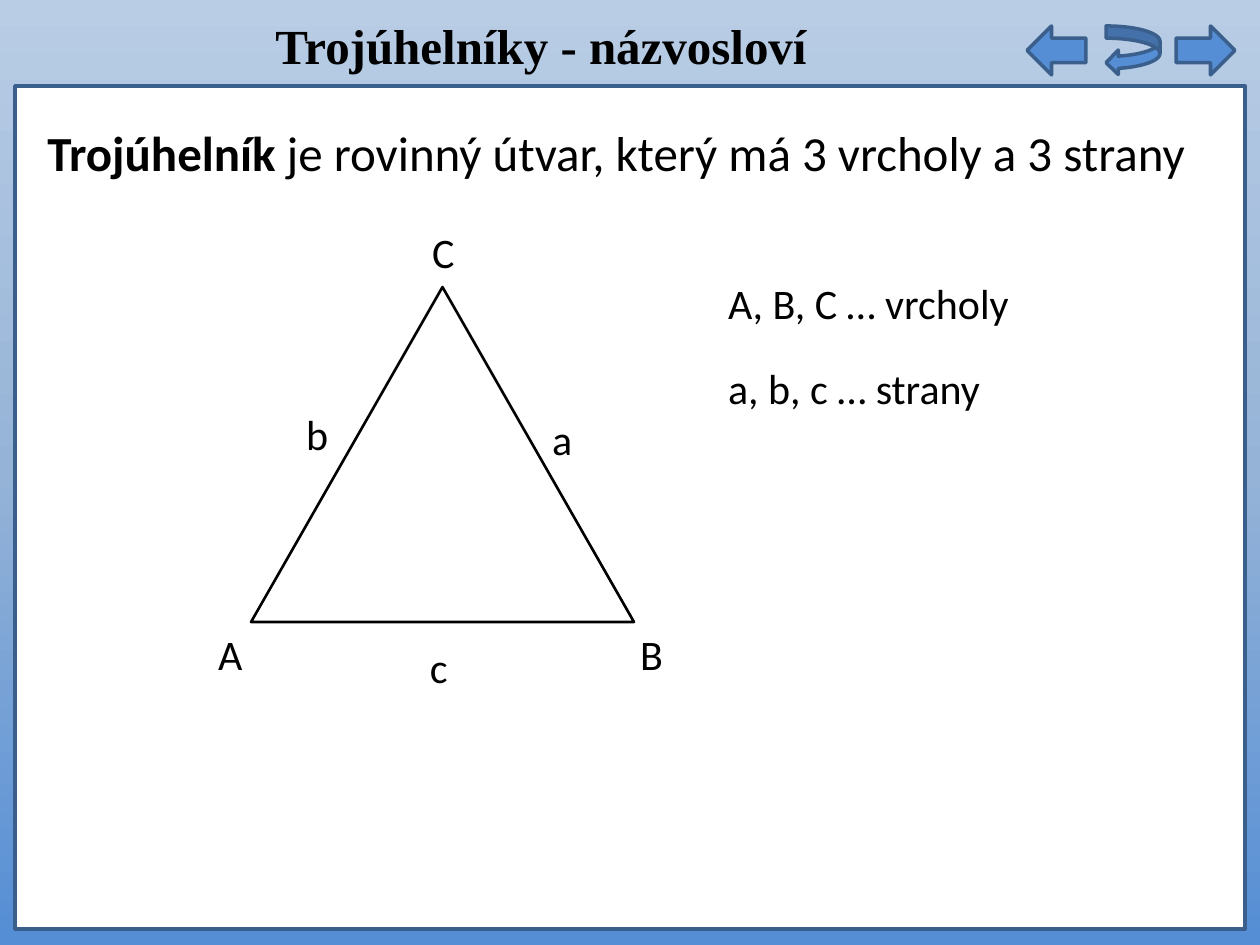
"""Build a slide that names the vertices and sides of a triangle."""
from dataclasses import dataclass
from typing import NamedTuple

from lxml import etree
from pptx import Presentation
from pptx import util as u
from pptx.dml.color import RGBColor
from pptx.enum import shapes, text
from pptx.oxml.ns import qn

PX = u.Inches(1) / 126


@dataclass(frozen=True)
class Theme:
    """Colours, fonts and type sizes of the slide."""
    sky: tuple = ((0, "B9CDE5"), (50, "95B3D7"), (100, "558ED5"))
    paper: str = "FFFFFF"
    accent: str = "558ED5"
    border: str = "3A5F8C"
    ink: str = "000000"
    title_font: str = "Times New Roman"
    body_font: str = "Calibri"
    heading: int = 28
    label: int = 24


class Box(NamedTuple):
    """Left, top, width and height in px."""
    x: int
    y: int
    w: int
    h: int


class Figure(NamedTuple):
    """A preset shape with its fill, line colour and line width."""
    kind: shapes.MSO_SHAPE
    box: Box
    fill: str | None
    line: str
    weight: float


class Label(NamedTuple):
    """A short caption and the top left corner of its box."""
    words: str
    x: int
    y: int
    w: int = 37


THEME = Theme()
TITLE_BOX = Box(4, -4, 1074, 97)
DEFINITION_BOX = Box(35, 116, 1181, 72)
DEFINITION = (("Trojúhelník ", True),
              ("je rovinný útvar, který má 3 vrcholy a 3 strany", False))
FIGURES = (
    Figure(shapes.MSO_SHAPE.RECTANGLE, Box(15, 86, 1230, 843), THEME.paper, THEME.border, 2),
    Figure(shapes.MSO_SHAPE.RIGHT_ARROW, Box(1176, 26, 59, 49), THEME.accent, THEME.border, 2),
    Figure(shapes.MSO_SHAPE.LEFT_ARROW, Box(1027, 26, 59, 49), THEME.accent, THEME.border, 2),
    Figure(shapes.MSO_SHAPE.CURVED_LEFT_ARROW, Box(1106, 26, 54, 49), THEME.accent, THEME.border, 2),
    Figure(shapes.MSO_SHAPE.ISOSCELES_TRIANGLE, Box(251, 287, 383, 335), None, THEME.ink, 1.5),
)
LABELS = (
    Label("A", 213, 616), Label("B", 635, 616), Label("C", 427, 214),
    Label("a", 547, 401), Label("b", 301, 396), Label("c", 425, 629),
    Label("A, B, C … vrcholy", 723, 265, 413),
    Label("a, b, c … strany", 723, 350, 413),
)


def emu(box: Box) -> list[u.Emu]:
    """Turn px lengths into EMU."""
    return [u.Emu(round(n * PX)) for n in box]


def set_font(font, name: str, size: int) -> None:
    """Set typeface, size and ink colour."""
    font.name, font.size = name, u.Pt(size)
    font.color.rgb = RGBColor.from_string(THEME.ink)


def paint_background(slide) -> None:
    """Fill the background with a vertical gradient."""
    fill = slide.background.fill
    fill.gradient()
    fill.gradient_angle = 270
    stops = next(slide.element.iter(qn("a:gsLst")))
    for gs in list(stops):
        stops.remove(gs)
    for pos, colour in THEME.sky:
        gs = etree.SubElement(stops, qn("a:gs"), pos=str(pos * 1000))
        etree.SubElement(gs, qn("a:srgbClr"), val=colour)


def add_title(slide, words: str) -> None:
    """Place the slide title."""
    sp = slide.shapes.title
    sp.left, sp.top, sp.width, sp.height = emu(TITLE_BOX)
    tf = sp.text_frame
    tf.text = words
    tf.vertical_anchor = text.MSO_ANCHOR.MIDDLE
    p = tf.paragraphs[0]
    p.alignment = text.PP_ALIGN.CENTER
    set_font(p.font, THEME.title_font, THEME.heading)
    p.font.bold = True


def add_figure(slide, figure: Figure) -> None:
    """Draw one preset shape."""
    sp = slide.shapes.add_shape(figure.kind, *emu(figure.box))
    sp.shadow.inherit = False
    if figure.fill:
        sp.fill.solid()
        sp.fill.fore_color.rgb = RGBColor.from_string(figure.fill)
    else:
        sp.fill.background()
    sp.line.color.rgb = RGBColor.from_string(figure.line)
    sp.line.width = u.Pt(figure.weight)


def add_text_frame(slide, box: Box, size: int):
    """Add a wrapping text box and return its frame."""
    tf = slide.shapes.add_textbox(*emu(box)).text_frame
    tf.word_wrap = True
    set_font(tf.paragraphs[0].font, THEME.body_font, size)
    return tf


def add_definition(slide) -> None:
    """Write the definition with its bold term."""
    tf = add_text_frame(slide, DEFINITION_BOX, THEME.heading)
    tf.auto_size = text.MSO_AUTO_SIZE.SHAPE_TO_FIT_TEXT
    for words, bold in DEFINITION:
        r = tf.paragraphs[0].add_run()
        r.text = words
        set_font(r.font, THEME.body_font, THEME.heading)
        r.font.bold = bold


def add_label(slide, label: Label) -> None:
    """Write one caption."""
    tf = add_text_frame(slide, Box(label.x, label.y, label.w, 53), THEME.label)
    tf.margin_left = tf.margin_top = tf.margin_right = tf.margin_bottom = u.Inches(0.04)
    p = tf.paragraphs[0]
    p.text = label.words
    p.line_spacing = 1.15
    p.space_after = u.Pt(10)


def main() -> None:
    """Build and save the slide."""
    prs = Presentation()
    prs.slide_width, prs.slide_height = u.Inches(10), u.Inches(7.5)
    s = prs.slides.add_slide(prs.slide_layouts[5])
    paint_background(s)
    add_title(s, "Trojúhelníky - názvosloví")
    for figure in FIGURES:
        add_figure(s, figure)
    add_definition(s)
    for label in LABELS:
        add_label(s, label)
    prs.save("out.pptx")


if __name__ == "__main__":
    main()
